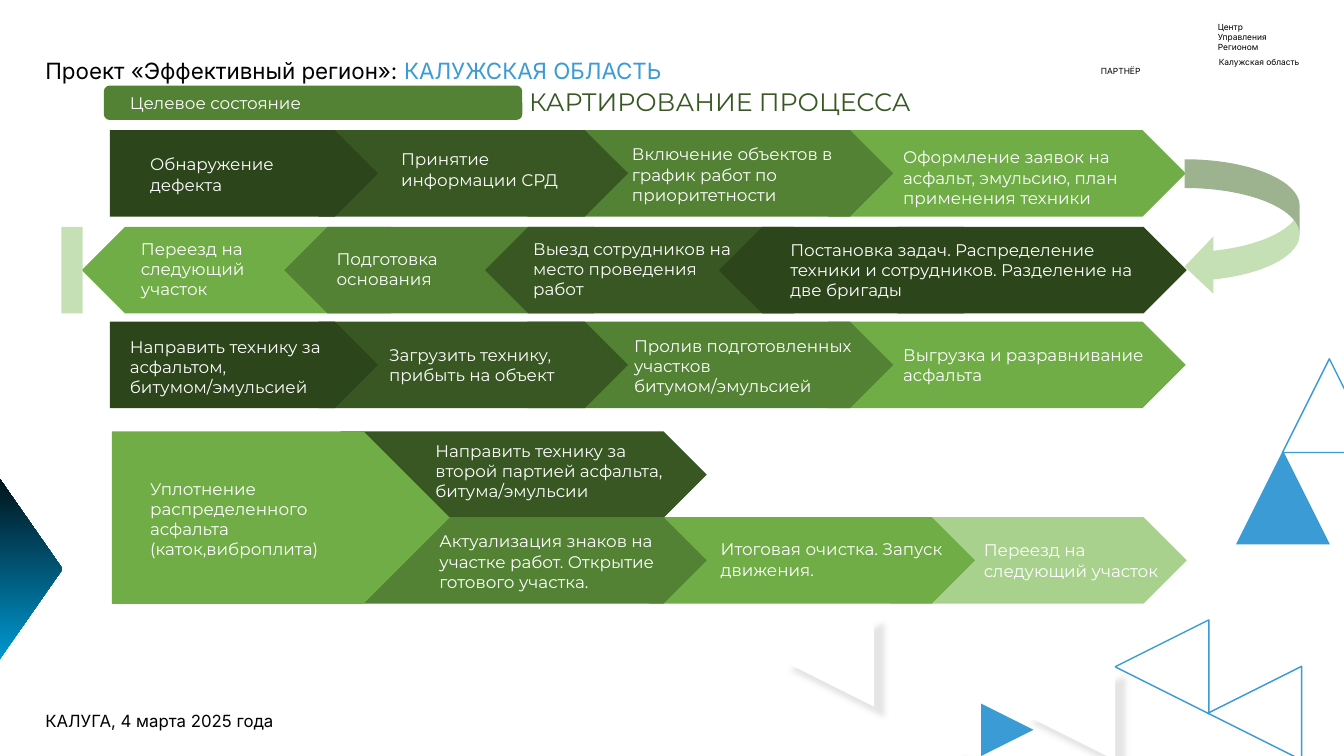
from dataclasses import dataclass

from lxml import etree
from pptx import Presentation
from pptx.dml.color import RGBColor
from pptx.enum.shapes import MSO_SHAPE as Shape
from pptx.enum.text import MSO_ANCHOR, PP_ALIGN
from pptx.oxml import parse_xml
from pptx.util import Inches, Pt


@dataclass(frozen=True)
class Theme:
    heading_font: str = "Inter"
    body_font: str = "Montserrat"
    caption_size: int = 6
    body_size: int = 12
    project_size: int = 16
    title_size: int = 18
    black: str = "000000"
    white: str = "FFFFFF"
    blue: str = "3A9BD5"
    cyan: str = "00AEEF"
    near_black: str = "010101"
    deepest: str = "2C451B"
    deep: str = "385723"
    middle: str = "548235"
    bright: str = "70AD47"
    light: str = "A9D18E"
    pale: str = "C5E0B4"


theme = Theme()
SHADOW = (
    '<a:effectLst xmlns:a="http://schemas.openxmlformats.org/drawingml/2006/main">'
    '<a:outerShdw blurRad="50800" dist="127000" dir="2700000" algn="tl" rotWithShape="0">'
    '<a:srgbClr val="BFBFBF"><a:alpha val="40000"/></a:srgbClr>'
    '</a:outerShdw></a:effectLst>'
)

presentation = Presentation()
presentation.slide_width = Inches(13.33)
presentation.slide_height = Inches(7.5)
slide = presentation.slides.add_slide(presentation.slide_layouts[5])


def add_figure(kind, box, fill=None, line=None, rotation=0):
    """Add a flat preset shape; box is left, top, width, height in inches."""
    shape = slide.shapes.add_shape(kind, *map(Inches, box))
    shape.shadow.inherit = False
    shape.rotation = rotation
    if fill:
        shape.fill.solid()
        shape.fill.fore_color.rgb = RGBColor.from_string(fill)
    else:
        shape.fill.background()
    if line:
        shape.line.color.rgb = RGBColor.from_string(line)
        shape.line.width = Pt(1)
    else:
        shape.line.fill.background()
    return shape


def add_text(lines, box, size=theme.body_size, font=theme.body_font, color=theme.white):
    """Add a wrapping text box with one paragraph per line."""
    frame = slide.shapes.add_textbox(*map(Inches, box)).text_frame
    frame.word_wrap = True
    frame.text = lines
    for paragraph in frame.paragraphs:
        paragraph.font.size = Pt(size)
        paragraph.font.name = font
        paragraph.font.color.rgb = RGBColor.from_string(color)
    return frame


# Organisation captions
for lines, box in [
    ("Центр\nУправления\nРегионом", (11.98, 0.17, 1.35, 0.4)),
    ("Калужская область", (11.99, 0.52, 1.34, 0.2)),
    ("ПАРТНЁР", (10.73, 0.61, 0.77, 0.2)),
]:
    caption = add_text(lines, box, theme.caption_size, theme.heading_font, theme.black)
caption.paragraphs[0].alignment = PP_ALIGN.CENTER

# Project line and date
project = add_text("Проект «Эффективный регион»: ", (0.29, -0.08, 6.42, 0.81),
                   theme.project_size, theme.heading_font, theme.black)
region = project.paragraphs[0].add_run()
region.text = "КАЛУЖСКАЯ ОБЛАСТЬ"
region.font.color.rgb = RGBColor.from_string(theme.blue)
date = add_text("КАЛУГА, 4 марта 2025 года", (0.29, 6.34, 2.56, 0.81),
                theme.body_size, theme.heading_font, theme.black)
for frame in (project, date):
    frame.word_wrap = False
    frame.margin_left = Inches(0.16)
    frame.paragraphs[0].line_spacing = Pt(62)

# Decorative triangles
TRIANGLE = 0.93
for left, top, rotation, fill, line in [
    (12.26, 4.47, 0, theme.blue, None),
    (12.72, 3.56, 0, None, theme.blue),
    (11.98, 6.61, 270, None, theme.blue),
    (11.06, 6.15, 270, None, theme.blue),
    (10.13, 6.61, 270, theme.white, None),
    (8.66, 7.01, 90, theme.white, None),
    (7.74, 6.08, 270, theme.white, None),
]:
    triangle = add_figure(Shape.ISOSCELES_TRIANGLE, (left, top, TRIANGLE, TRIANGLE),
                          fill, line, rotation)
    if fill == theme.white:
        properties = triangle.element.spPr
        etree.strip_elements(properties, "{*}effectLst")
        properties.append(parse_xml(SHADOW))

edge = add_figure(Shape.ISOSCELES_TRIANGLE, (-1.18, 5.18, 2.67, 0.93), rotation=90)
edge.fill.gradient()
edge.fill.gradient_angle = 180
for stop, position, color in zip(edge.fill.gradient_stops, (0.05, 0.93),
                                 (theme.cyan, theme.near_black)):
    stop.position = position
    stop.color.rgb = RGBColor.from_string(color)
add_figure(Shape.ISOSCELES_TRIANGLE, (9.73, 6.98, 0.52, 0.52), theme.blue, rotation=90)

# Title and state badge
title = slide.shapes.title
title.left, title.top, title.width, title.height = map(Inches, (4.89, 0.84, 4.5, 0.37))
title.text_frame.text = "КАРТИРОВАНИЕ ПРОЦЕССА"
title.text_frame.vertical_anchor = MSO_ANCHOR.BOTTOM
heading = title.text_frame.paragraphs[0]
heading.alignment = PP_ALIGN.CENTER
heading.line_spacing = 0.9
heading.font.size = Pt(theme.title_size)
heading.font.name = theme.body_font
heading.font.color.rgb = RGBColor.from_string(theme.deep)

add_figure(Shape.ROUNDED_RECTANGLE, (1.03, 0.85, 4.15, 0.34), theme.middle)
add_text("Целевое состояние", (1.19, 0.87, 3.28, 0.3))

# Process arrows: each plate covers the blunt end of the one before it
PLATE = 0.86
forward_row = [(8.21, 3.55, theme.bright), (5.23, 3.63, theme.middle),
               (3.16, 3.07, theme.deep), (1.09, 2.66, theme.deepest)]
plates = [(left, top, width, PLATE, fill, 0)
          for top in (1.29, 3.19) for left, width, fill in forward_row]
plates += [
    (0.81, 2.25, 3.07, PLATE, theme.bright, 180),
    (2.82, 2.25, 3.07, PLATE, theme.middle, 180),
    (4.81, 2.25, 3.07, PLATE, theme.deep, 180),
    (8.9, 2.25, 2.87, PLATE, theme.deepest, 0),
    (7.13, 2.25, 2.43, PLATE, theme.deepest, 180),
    (8.83, 5.13, 2.94, PLATE, theme.light, 0),
    (6.44, 5.13, 3.23, PLATE, theme.bright, 0),
    (3.38, 4.28, 3.63, PLATE, theme.deep, 0),
    (3.38, 5.13, 3.63, PLATE, theme.middle, 0),
    (1.11, 4.28, 3.35, 1.71, theme.bright, 0),
]
for *box, fill, rotation in plates:
    add_figure(Shape.PENTAGON, box, fill, rotation=rotation)

add_figure(Shape.CURVED_LEFT_ARROW, (11.75, 1.58, 1.14, 1.35), theme.pale)
add_figure(Shape.RECTANGLE, (0.61, 2.25, 0.21, PLATE), theme.pale)

for label, *box in [
    ("Обнаружение дефекта", 1.39, 1.48, 1.96, 0.44),
    ("Принятие информации СРД", 3.88, 1.43, 1.96, 0.71),
    ("Включение объектов в график работ по приоритетности", 6.17, 1.38, 2.37, 0.71),
    ("Оформление заявок на асфальт, эмульсию, план применения техники",
     8.86, 1.41, 2.8, 0.71),
    ("Постановка задач. Распределение техники и сотрудников. Разделение на две бригады",
     7.74, 2.33, 3.76, 0.71),
    ("Выезд сотрудников на место проведения работ", 5.19, 2.32, 2.3, 0.71),
    ("Подготовка основания", 3.24, 2.42, 1.96, 0.5),
    ("Переезд на следующий участок", 1.3, 2.32, 1.71, 0.71),
    ("Направить технику за асфальтом, битумом/эмульсией", 1.19, 3.29, 2.38, 0.71),
    ("Загрузить технику, прибыть на объект", 3.76, 3.37, 2.19, 0.5),
    ("Пролив подготовленных участков битумом/эмульсией", 6.19, 3.28, 2.66, 0.91),
    ("Выгрузка и разравнивание асфальта", 8.86, 3.37, 2.8, 0.5),
    ("Уплотнение распределенного асфальта (каток,виброплита)", 1.39, 4.7, 2.38, 0.91),
    ("Направить технику за второй партией асфальта, битума/эмульсии",
     4.22, 4.32, 2.6, 0.71),
    ("Актуализация знаков на участке работ. Открытие готового участка.",
     4.26, 5.22, 2.88, 0.71),
    ("Итоговая очистка. Запуск движения.", 7.05, 5.3, 2.66, 0.5),
    ("Переезд на следующий участок", 9.66, 5.31, 2.16, 0.5),
]:
    add_text(label, box)

presentation.save("out.pptx")
